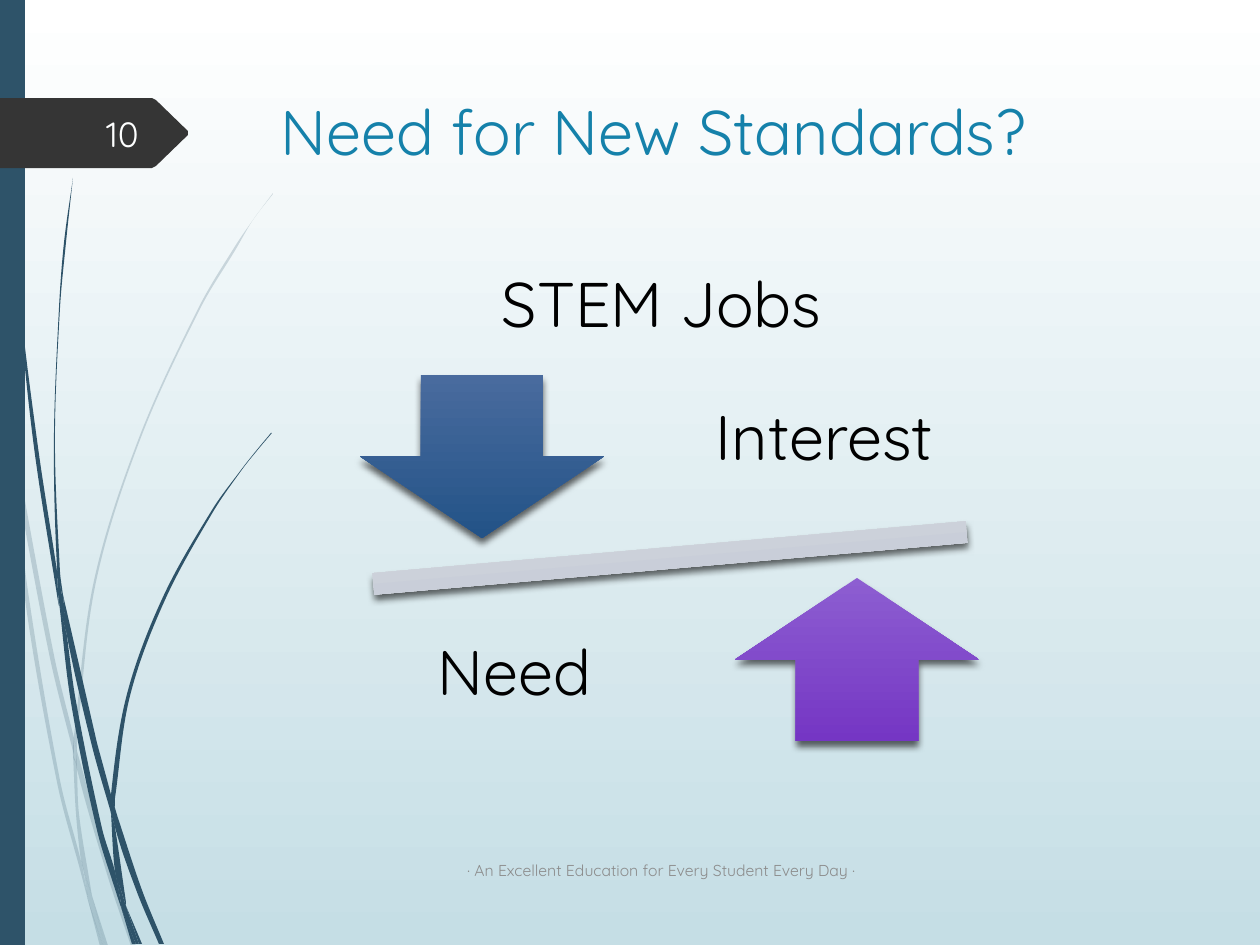
import math

import pptx
import pptx.util
import pptx.dml.color
import pptx.enum.shapes
import pptx.enum.text
import pptx.oxml
import pptx.oxml.ns

RGBColor = pptx.dml.color.RGBColor
SHAPE = pptx.enum.shapes.MSO_SHAPE
ALIGN = pptx.enum.text.PP_ALIGN
ANCHOR = pptx.enum.text.MSO_ANCHOR
qn = pptx.oxml.ns.qn

EMU_PER_PX = 914400 / 126
A_NAMESPACE = pptx.oxml.ns.nsdecls("a")
FONT = "Quicksand"
WHITE = RGBColor(0xFF, 0xFF, 0xFF)
PALE_TEAL = RGBColor(0xC5, 0xDE, 0xE5)
NAVY = RGBColor(0x2E, 0x53, 0x69)
CHARCOAL = RGBColor(0x35, 0x35, 0x35)
NUMBER_WHITE = RGBColor(0xFE, 0xFF, 0xFF)
TITLE_BLUE = RGBColor(0x15, 0x81, 0xAA)
BLACK = RGBColor(0, 0, 0)
FOOTER_GREY = RGBColor(0x8C, 0x8C, 0x8C)
BEAM = (RGBColor(0xD9, 0xDD, 0xE4), RGBColor(0xBC, 0xC2, 0xCF))
BLUE_ARROW = (RGBColor(0x49, 0x6B, 0x9E), RGBColor(0x23, 0x53, 0x87))
PURPLE_ARROW = (RGBColor(0x8D, 0x5E, 0xD1), RGBColor(0x75, 0x36, 0xC4))

PALE_BLADES = [
    ([(0, 355), (8, 406), (10, 441)], [(9, 433), (0, 377)]),
    ([(13, 435), (54, 655), (74, 738)], [(74, 755), (50, 658), (15, 474)]),
    ([(77, 751), (77, 769), (107, 874), (131, 946)], [(136, 946), (111, 872), (81, 765)]),
    ([(92, 896), (105, 946)], [(108, 946)]),
    ([(10, 441), (24, 592), (57, 782), (81, 873), (88, 900)],
     [(87, 891), (81, 861), (60, 780), (28, 591), (15, 474)]),
    ([(73, 755), (76, 814), (81, 861), (84, 872), (92, 896)],
     [(91, 890), (79, 814), (77, 769), (77, 766)]),
    ([(273, 193), (253, 220), (234, 248), (199, 307), (139, 438), (94, 581),
      (74, 736), (74, 738), (77, 751)],
     [(77, 736), (96, 582), (140, 440), (200, 309), (236, 249), (253, 220), (273, 194)]),
    ([(88, 900), (100, 946)], [(103, 946)]),
    ([(74, 738), (73, 755), (77, 766)], [(77, 769), (77, 751)]),
    ([(82, 861), (87, 891), (88, 900), (103, 946)], [(105, 946), (92, 896), (84, 872)]),
]
DARK_BLADES = [
    ([(3, 0), (4, 60), (6, 139), (18, 294), (34, 447), (58, 601), (59, 606)],
     [(57, 576), (57, 571), (38, 447), (19, 292), (8, 137), (5, 60), (4, 0)]),
    ([(63, 595), (67, 636), (92, 746), (111, 813)], [(111, 798), (111, 795), (97, 743)]),
    ([(115, 808), (115, 827), (137, 892), (159, 944)], [(164, 944), (142, 890), (118, 818)]),
    ([(59, 601), (71, 702), (97, 830), (116, 892), (122, 910)],
     [(121, 903), (115, 871), (102, 828), (76, 701), (67, 636)]),
    ([(73, 178), (64, 243), (59, 309), (54, 440), (57, 566), (62, 595)],
     [(63, 595), (60, 571), (55, 440), (60, 309), (66, 243), (73, 178)]),
    ([(126, 906), (139, 944)], [(142, 944)]),
    ([(57, 566), (57, 571), (59, 601), (67, 636)], [(63, 595), (62, 595)]),
    ([(271, 433), (256, 451), (241, 470), (212, 510), (163, 597), (127, 694),
      (111, 795), (115, 808)],
     [(115, 798), (130, 696), (165, 600), (213, 512), (241, 471), (256, 452), (272, 433)]),
    ([(122, 910), (132, 944)], [(136, 944)]),
    ([(111, 813), (115, 871), (121, 890), (126, 906)], [(126, 902), (115, 827), (113, 820)]),
    ([(111, 795), (111, 798), (111, 813), (113, 820)], [(115, 827), (115, 808)]),
    ([(115, 871), (121, 903), (122, 910), (136, 944)], [(139, 944), (126, 906), (121, 890)]),
]


def px(length):
    return pptx.util.Emu(round(length * EMU_PER_PX))


def place(box):
    return [px(length) for length in box]


def fill_gradient(fill, colours):
    fill.gradient()
    fill.gradient_angle = 270
    for stop, colour, position in zip(fill.gradient_stops, colours, (0, 1)):
        stop.color.rgb = colour
        stop.position = position


def fill_solid(shape, colour):
    shape.fill.solid()
    shape.fill.fore_color.rgb = colour
    shape.line.fill.background()
    shape.shadow.inherit = False


def write(frame, text, size, colour, align, anchor):
    frame.word_wrap = True
    frame.vertical_anchor = anchor
    frame.text = text
    paragraph = frame.paragraphs[0]
    paragraph.alignment = align
    font = paragraph.runs[0].font
    font.name = FONT
    font.size = pptx.util.Pt(size)
    font.color.rgb = colour


def add_text(slide, box, text, size, colour, align=ALIGN.CENTER, anchor=ANCHOR.MIDDLE):
    frame = slide.shapes.add_textbox(*place(box)).text_frame
    write(frame, text, size, colour, align, anchor)
    return frame


def add_outline(slide, left, top, points):
    corners = [(px(left + x), px(top + y)) for x, y in points]
    builder = slide.shapes.build_freeform(*corners[0])
    builder.add_line_segments(corners[1:], close=True)
    return builder.convert_to_shape()


def handle(origin, before, after, reach):
    dx, dy = after[0] - before[0], after[1] - before[1]
    scale = reach / (math.hypot(dx, dy) or 1)
    return origin[0] + dx * scale, origin[1] + dy * scale


def bezier_points(edge):
    padded = [edge[0], *edge, edge[-1]]
    points = []
    for a, b, c, d in zip(padded, padded[1:], padded[2:], padded[3:]):
        reach = math.dist(b, c) / 3
        points += [handle(b, a, c, reach), handle(c, d, b, reach), c]
    return points


def draw_blade(slide, left, top, blade, opacity):
    down, up = blade
    points = [down[0], *bezier_points(down), down[-1], up[0], up[0], *bezier_points(up)]
    shape = add_outline(slide, left, top, points)
    fill_solid(shape, NAVY)
    lines = list(shape._element.iter(qn("a:lnTo")))
    for first, second, third in zip(lines[::3], lines[1::3], lines[2::3]):
        curve = pptx.oxml.parse_xml(f"<a:cubicBezTo {A_NAMESPACE}/>")
        first.addprevious(curve)
        for line in (first, second, third):
            curve.append(line[0])
            line.getparent().remove(line)
    if opacity < 100:
        colour = next(shape._element.spPr.iter(qn("a:srgbClr")))
        colour.append(pptx.oxml.parse_xml(f'<a:alpha {A_NAMESPACE} val="{opacity * 1000}"/>'))


def draw_side_decoration(slide, box):
    left, top, width, height = box
    for blades, opacity in ((PALE_BLADES, 20), (DARK_BLADES, 100)):
        for blade in blades:
            draw_blade(slide, left, top, blade, opacity)
    bar = slide.shapes.add_shape(SHAPE.RECTANGLE, *place((left, top, 25, height)))
    fill_solid(bar, NAVY)


def draw_number_tag(slide, box, number):
    left, top, width, height = box
    upper = [(0, 0), (width - 36, 0), (width - 32, 2), (width, 33)]
    lower = [(x, height - y) for x, y in reversed(upper)]
    fill_solid(add_outline(slide, left, top, upper + lower), CHARCOAL)
    add_text(slide, (left + 70, top + 10, 81, 51), number, 20, NUMBER_WHITE, ALIGN.RIGHT)


def set_title(slide, box, text):
    title = slide.shapes.title
    title.left, title.top, title.width, title.height = place(box)
    write(title.text_frame, text, 36, TITLE_BLUE, ALIGN.LEFT, ANCHOR.TOP)


def add_raised_shape(slide, kind, box, colours):
    shape = slide.shapes.add_shape(kind, *place(box))
    fill_gradient(shape.fill, colours)
    shape.line.fill.background()
    shape.shadow.inherit = False
    shape._element.spPr.find(qn("a:effectLst")).append(pptx.oxml.parse_xml(
        f'<a:outerShdw {A_NAMESPACE} blurRad="50800" dist="38100" dir="5400000" '
        'rotWithShape="0"><a:srgbClr val="000000"><a:alpha val="60000"/></a:srgbClr>'
        '</a:outerShdw>'))
    return shape


def add_balance_label(slide, box, text):
    frame = add_text(slide, box, text, 36, BLACK)
    frame.margin_left = frame.margin_right = px(35)
    frame.margin_top = frame.margin_bottom = px(35)
    frame.paragraphs[0].line_spacing = 0.9


def draw_balance(slide, box):
    left, top, width, height = box
    beam = add_raised_shape(slide, SHAPE.MATH_MINUS, (left, top + 157, width, 92), BEAM)
    beam.rotation = 355
    add_raised_shape(slide, SHAPE.DOWN_ARROW, (left + 95, top + 20, 244, 163), BLUE_ARROW)
    add_balance_label(slide, (left + 383, top, 353, 170), "Interest")
    add_raised_shape(slide, SHAPE.UP_ARROW, (left + 470, top + 223, 244, 163), PURPLE_ARROW)
    add_balance_label(slide, (left + 105, top + 235, 289, 170), "Need")


def main():
    deck = pptx.Presentation()
    deck.slide_width, deck.slide_height = px(1260), px(945)
    slide = deck.slides.add_slide(deck.slide_layouts[5])
    fill_gradient(slide.background.fill, (WHITE, PALE_TEAL))
    draw_side_decoration(slide, (0, 0, 273, 945))
    draw_number_tag(slide, (0, 98, 188, 70), "10")
    set_title(slide, (268, 86, 908, 176), "Need for New Standards?")
    add_text(slide, (330, 258, 663, 89), "STEM Jobs", 36, BLACK, anchor=ANCHOR.TOP)
    draw_balance(slide, (265, 355, 810, 405))
    add_text(slide, (267, 845, 788, 50),
             "· An Excellent Education for Every Student Every Day ·", 9, FOOTER_GREY)
    deck.save("out.pptx")


if __name__ == "__main__":
    main()
